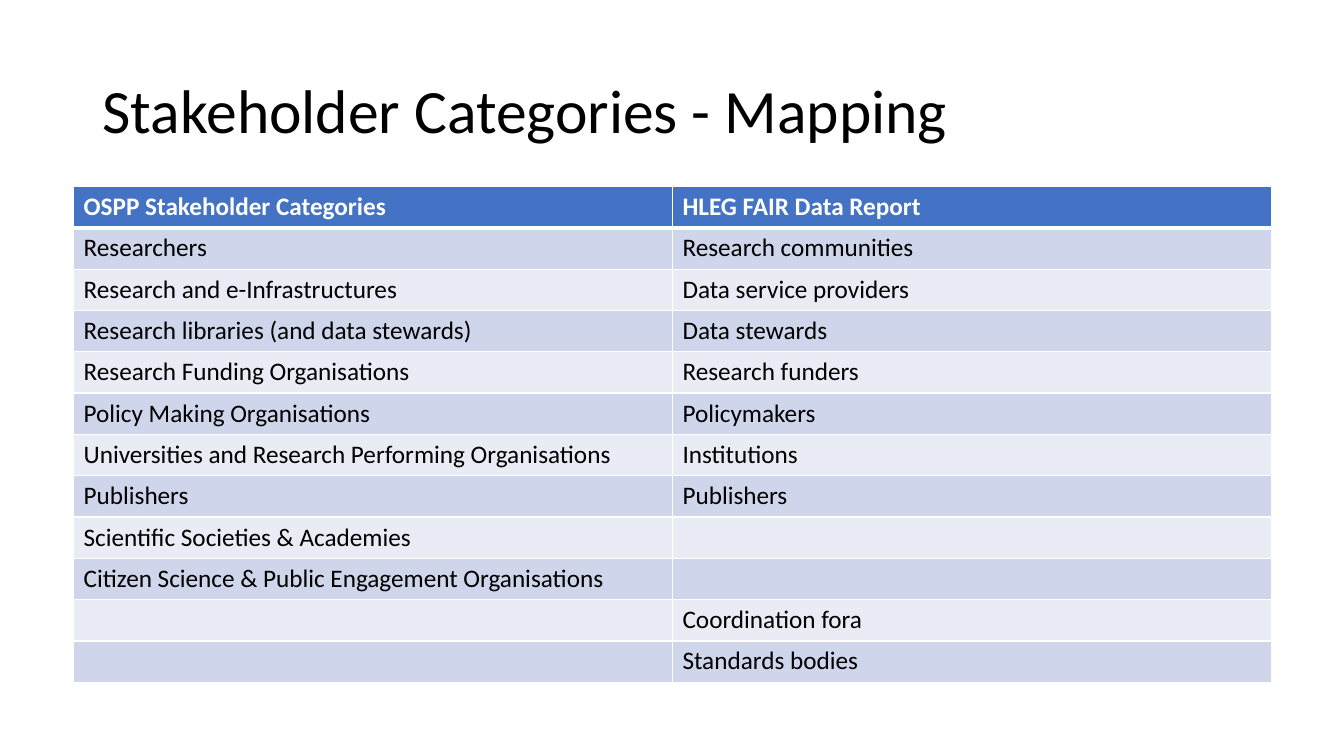
from lxml import etree
from pptx import Presentation
from pptx import util as u
from pptx.dml.color import RGBColor
from pptx.enum import text
from pptx.oxml import ns

STAKEHOLDERS = [
    ("OSPP Stakeholder Categories", "HLEG FAIR Data Report"),
    ("Researchers", "Research communities"),
    ("Research and e-Infrastructures", "Data service providers"),
    ("Research libraries (and data stewards)", "Data stewards"),
    ("Research Funding Organisations", "Research funders"),
    ("Policy Making Organisations", "Policymakers"),
    ("Universities and Research Performing Organisations", "Institutions"),
    ("Publishers", "Publishers"),
    ("Scientific Societies & Academies", ""),
    ("Citizen Science & Public Engagement Organisations", ""),
    ("", "Coordination fora"),
    ("", "Standards bodies"),
]


def color(value):
    return RGBColor.from_string(value)


class SlideBuilder:
    font_name = "Calibri"
    ink = "000000"
    paper = "FFFFFF"
    header_fill = "4472C4"
    band_fills = ("E9EBF5", "CFD5EA")
    column_width = u.Inches(5.94)
    row_height = u.Inches(0.41)

    def __init__(self, slide):
        self.slide = slide

    def style(self, paragraph, size, ink, bold=False):
        font = paragraph.font
        font.name = self.font_name
        font.size = u.Pt(size)
        font.bold = bold
        font.color.rgb = color(ink)

    def title(self, wording, left, top, width, height):
        box = self.slide.shapes.add_textbox(
            u.Inches(left), u.Inches(top), u.Inches(width), u.Inches(height))
        frame = box.text_frame
        frame.word_wrap = True
        frame.vertical_anchor = text.MSO_ANCHOR.MIDDLE
        paragraph = frame.paragraphs[0]
        paragraph.text = wording
        paragraph.line_spacing = 0.9
        self.style(paragraph, 44, self.ink)

    def border(self, cell, side, points):
        properties = cell._tc.get_or_add_tcPr()
        line = etree.SubElement(properties, ns.qn(f"a:ln{side}"), w=str(u.Pt(points)))
        fill = etree.SubElement(line, ns.qn("a:solidFill"))
        etree.SubElement(fill, ns.qn("a:srgbClr"), val=self.paper)

    def cell(self, cell, wording, row):
        header = row == 0
        widths = {"L": 1, "R": 1, "T": 3 if row == 1 else 1, "B": 3 if header else 1}
        for side, points in widths.items():
            self.border(cell, side, points)
        cell.fill.solid()
        cell.fill.fore_color.rgb = color(
            self.header_fill if header else self.band_fills[row % 2])
        paragraph = cell.text_frame.paragraphs[0]
        paragraph.text = wording
        self.style(paragraph, 18, self.paper if header else self.ink, header)

    def table(self, rows, left, top):
        columns = len(rows[0])
        table = self.slide.shapes.add_table(
            len(rows), columns, u.Inches(left), u.Inches(top),
            self.column_width * columns, self.row_height * len(rows)).table
        for row, wordings in enumerate(rows):
            for column, wording in enumerate(wordings):
                self.cell(table.cell(row, column), wording, row)


def main():
    presentation = Presentation()
    presentation.slide_width = u.Inches(13.33)
    presentation.slide_height = u.Inches(7.5)
    slide = presentation.slides.add_slide(presentation.slide_layouts[6])
    builder = SlideBuilder(slide)
    builder.title("Stakeholder Categories - Mapping", 0.92, 0.4, 11.5, 1.45)
    builder.table(STAKEHOLDERS, 0.73, 1.85)
    presentation.save("out.pptx")


if __name__ == "__main__":
    main()
